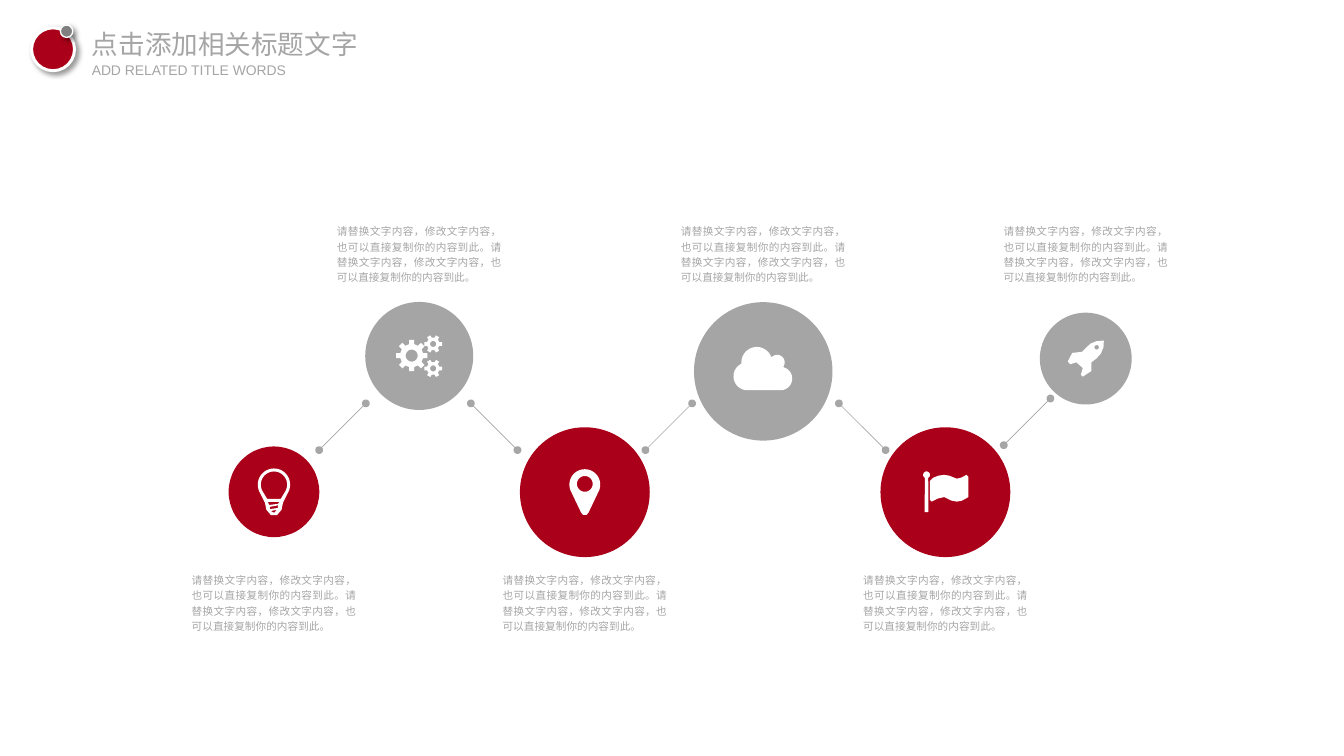
"""Build a slide with a zigzag of six icon circles, each with its own text."""
from math import cos, pi, radians, sin

from lxml.etree import SubElement
from pptx import Presentation
from pptx.dml.color import RGBColor
from pptx.enum.shapes import MSO_CONNECTOR, MSO_SHAPE
from pptx.enum.text import MSO_ANCHOR, MSO_AUTO_SIZE, PP_ALIGN
from pptx.oxml.ns import qn
from pptx.util import Cm, Pt

COLORS = {"red": "AB0019", "gray": "A5A5A5", "text": "A6A6A6",
          "dark": "808080", "white": "FFFFFF", "black": "000000"}
SENTENCE = "请替换文字内容，修改文字内容，也可以直接复制你的内容到此。"
TEXT_WIDTH, TEXT_HEIGHT = 4.37, 1.6
TEXT_TOP = {"red": 15.19, "gray": 5.92}
STEP = 1.24


def rgb(name):
    return RGBColor.from_string(COLORS[name])


def arc(cx, cy, r, start=0, end=360):
    """Return points on an arc, clockwise, in degrees from the right."""
    n = max(8, round((end - start) / 8))
    angles = [radians(start + (end - start) * i / n) for i in range(n + 1)]
    return [(cx + r * cos(a), cy + r * sin(a)) for a in angles]


def gear(cx, cy, r, root, hole, teeth):
    """Return the toothed outline and the hole of a gear."""
    pitch = 2 * pi / teeth
    profile = [(-0.28, root), (-0.2, r), (0.2, r), (0.28, root)]
    outline = [(cx + d * cos((i + f) * pitch), cy + d * sin((i + f) * pitch))
               for i in range(teeth) for f, d in profile]
    return [outline, arc(cx, cy, hole)]


BULB = [
    arc(0, -0.19, 0.43, 150, 390) + [(0.24, 0.29), (0.2, 0.48), (0.08, 0.62),
                                     (-0.08, 0.62), (-0.2, 0.48), (-0.24, 0.29)],
    arc(0, -0.19, 0.35, 150, 390) + [(0.18, 0.19), (-0.18, 0.19)],
    [(-0.16, 0.27), (0.14, 0.27), (0.11, 0.32), (-0.13, 0.35)],
    [(-0.11, 0.4), (0.11, 0.36), (0.1, 0.43), (-0.11, 0.46)],
    [(-0.08, 0.51), (0.07, 0.48), (0.02, 0.55), (-0.02, 0.55)],
]
GEARS = (gear(-0.2, -0.01, 0.42, 0.31, 0.16, 8)
         + gear(0.37, -0.32, 0.24, 0.17, 0.08, 6)
         + gear(0.37, 0.33, 0.24, 0.17, 0.08, 6))
PIN = [
    arc(0, -0.2, 0.41, 160, 380) + [(0.1, 0.54), (0.05, 0.6),
                                    (-0.05, 0.6), (-0.1, 0.54)],
    arc(0, -0.22, 0.21),
]
CLOUD = [arc(-0.42, 0.13, 0.37, 90, 245) + arc(-0.17, -0.24, 0.41, 175, 339)
         + arc(0.37, -0.24, 0.2, 225, 396) + arc(0.46, 0.19, 0.31, 287, 450)]
FLAG = [
    arc(-0.5, -0.46, 0.09, 120, 420) + [(-0.45, 0.53), (-0.55, 0.53)],
    [(-0.41, -0.3), (-0.33, -0.38), (-0.18, -0.44), (-0.03, -0.46),
     (0.1, -0.44), (0.25, -0.38), (0.31, -0.36), (0.43, -0.39), (0.56, -0.46),
     (0.61, -0.41), (0.61, 0.13), (0.56, 0.16), (0.43, 0.23), (0.3, 0.25),
     (0.15, 0.22), (-0.03, 0.13), (-0.2, 0.17), (-0.36, 0.25), (-0.41, 0.2)],
]
ROCKET = [
    [(0.48, -0.48), (0.47, -0.3), (0.4, -0.13), (0.28, 0), (0.15, 0.1),
     (0.15, 0.33), (-0.08, 0.48), (-0.13, 0.43), (-0.08, 0.25), (-0.25, 0.1),
     (-0.41, 0.15), (-0.48, 0.08), (-0.36, -0.15), (-0.1, -0.18), (0, -0.28),
     (0.13, -0.4), (0.28, -0.46)],
    arc(0.29, -0.3, 0.06),
]
STOPS = [
    (7.28, 13.07, 2.41, "red", BULB),
    (11.14, 9.46, 2.87, "gray", GEARS),
    (15.54, 13.08, 3.45, "red", PIN),
    (20.28, 9.87, 3.68, "gray", CLOUD),
    (25.12, 13.08, 3.45, "red", FLAG),
    (28.85, 9.53, 2.44, "gray", ROCKET),
]
LINKS = [(8.48, 11.96, -STEP), (12.51, 10.72, STEP), (17.15, 11.96, -STEP),
         (22.29, 10.72, STEP), (26.67, 11.83, -STEP)]


def add_circle(shapes, cx, cy, d, color):
    s = shapes.add_shape(MSO_SHAPE.OVAL, Cm(cx - d / 2), Cm(cy - d / 2), Cm(d), Cm(d))
    s.shadow.inherit = False
    s.fill.solid()
    s.fill.fore_color.rgb = rgb(color)
    s.line.fill.background()
    return s


def add_icon(shapes, cx, cy, contours):
    """Draw white contours around a centre; inner contours become holes."""
    placed = [[(Cm(cx + x), Cm(cy + y)) for x, y in c] for c in contours]
    builder = shapes.build_freeform(*placed[0][0])
    for points in placed:
        builder.move_to(*points[0])
        builder.add_line_segments(points[1:], close=True)
    s = builder.convert_to_shape()
    s.shadow.inherit = False
    s.fill.solid()
    s.fill.fore_color.rgb = rgb("white")
    s.line.fill.background()


def add_link(shapes, x, y, rise):
    """Draw a diagonal line with a dot at each end."""
    s = shapes.add_connector(MSO_CONNECTOR.STRAIGHT, Cm(x), Cm(y), Cm(x + STEP), Cm(y + rise))
    s.line.color.rgb = rgb("text")
    s.line.width = Pt(0.5)
    ln = s.element.spPr.find(qn("a:ln"))
    for end in ("a:headEnd", "a:tailEnd"):
        SubElement(ln, qn(end), type="oval")
    SubElement(s.element.spPr, qn("a:effectLst"))


def set_text(s, text, size, color, align=PP_ALIGN.LEFT, wrap=False):
    tf = s.text_frame
    tf.text = text
    tf.margin_left = tf.margin_right = tf.margin_top = tf.margin_bottom = 0
    tf.word_wrap = wrap
    tf.auto_size = MSO_AUTO_SIZE.NONE
    tf.vertical_anchor = MSO_ANCHOR.TOP
    p = tf.paragraphs[0]
    p.alignment = align
    p.font.name = "Arial"
    p.font.size = Pt(size)
    p.font.color.rgb = rgb(color)
    return p


def add_stop(shapes, cx, cy, d, color, icon):
    """Add a circle with its icon, and its text above or below."""
    group = shapes.add_group_shape()
    add_circle(group.shapes, cx, cy, d, color)
    add_icon(group.shapes, cx, cy, icon)
    box = shapes.add_textbox(Cm(cx - TEXT_WIDTH / 2), Cm(TEXT_TOP[color]),
                             Cm(TEXT_WIDTH), Cm(TEXT_HEIGHT))
    p = set_text(box, SENTENCE * 2, 8, "text", PP_ALIGN.JUSTIFY, True)
    p.line_spacing = 1.2


def add_badge(shapes, cx, cy, d, color, width):
    """Add a white-rimmed circle with a soft shadow."""
    s = add_circle(shapes, cx, cy, d, color)
    s.line.color.rgb = rgb("white")
    s.line.width = Pt(width)
    effects = s.element.spPr.find(qn("a:effectLst"))
    shadow = SubElement(effects, qn("a:outerShdw"), blurRad=str(Pt(4)),
                        dist=str(Pt(3)), dir="2700000", algn="tl", rotWithShape="0")
    tone = SubElement(shadow, qn("a:srgbClr"), val=COLORS["black"])
    SubElement(tone, qn("a:alpha"), val="40000")


def add_heading(shapes):
    title = shapes.title
    title.left, title.top, title.width, title.height = Cm(2.44), Cm(0.74), Cm(7.11), Cm(0.86)
    set_text(title, "点击添加相关标题文字", 20, "gray")
    subtitle = shapes.add_textbox(Cm(2.44), Cm(1.63), Cm(5.28), Cm(0.46))
    set_text(subtitle, "ADD RELATED TITLE WORDS", 10.5, "gray")
    add_badge(shapes, 1.41, 1.31, 1.14, "red", 2.25)
    add_badge(shapes, 1.77, 0.83, 0.33, "dark", 1)


def main():
    prs = Presentation()
    prs.slide_width, prs.slide_height = Cm(35.71), Cm(20.09)
    shapes = prs.slides.add_slide(prs.slide_layouts[5]).shapes
    for stop in STOPS:
        add_stop(shapes, *stop)
    for link in LINKS:
        add_link(shapes, *link)
    add_heading(shapes)
    prs.save("out.pptx")


if __name__ == "__main__":
    main()
